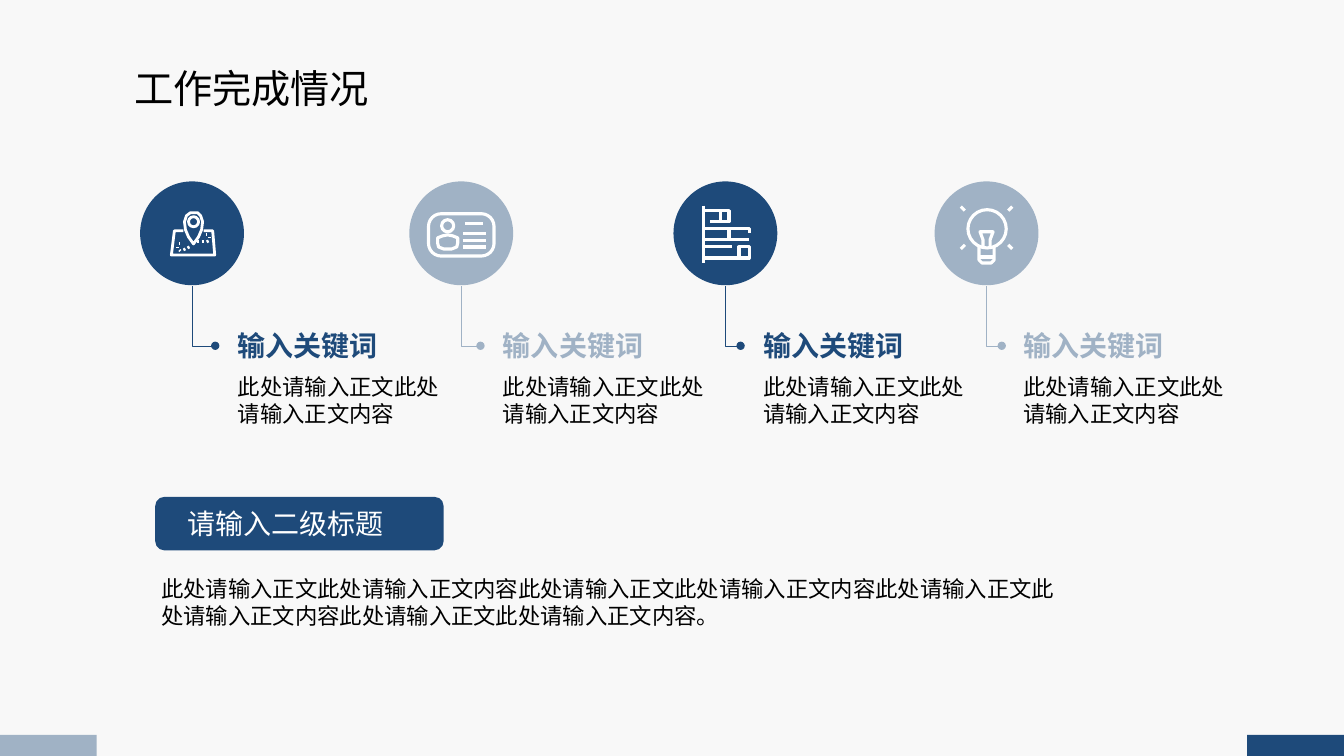
"""Build the work completion slide with four keyword columns and a summary."""
from lxml import etree
from pptx import Presentation
from pptx import util as u
from pptx.dml.color import RGBColor
from pptx.enum import shapes, text
from pptx.oxml.ns import qn


class Theme:
    navy = RGBColor(0x1E, 0x4A, 0x7A)
    mist = RGBColor(0xA0, 0xB2, 0xC5)
    white = RGBColor(0xFF, 0xFF, 0xFF)
    black = RGBColor(0, 0, 0)
    page = RGBColor(0xF8, 0xF8, 0xF8)
    font = "Noto Sans CJK SC"
    title, head, body = u.Pt(28), u.Pt(20), u.Pt(16)
    hair = u.Pt(0.25)


def write(box, words, size, color, bold=False, align=text.PP_ALIGN.LEFT):
    frame = box.text_frame
    frame.word_wrap = True
    frame.auto_size = text.MSO_AUTO_SIZE.NONE
    frame.vertical_anchor = text.MSO_ANCHOR.TOP
    para = frame.paragraphs[0]
    para.alignment = align
    run = para.add_run()
    run.text = words
    run.font.size, run.font.bold, run.font.name = size, bold, Theme.font
    run.font.color.rgb = color
    etree.SubElement(run.font._element, qn("a:ea"), typeface=Theme.font)


def paint(shape, fill=None, line=None, width=0):
    shape.shadow.inherit = False
    if fill is None:
        shape.fill.background()
    else:
        shape.fill.solid()
        shape.fill.fore_color.rgb = fill
    if line is None:
        shape.line.fill.background()
    else:
        shape.line.color.rgb = line
        shape.line.width = u.Pt(width)


deck = Presentation()
deck.slide_width, deck.slide_height = u.Inches(13.33), u.Inches(7.5)
slide = deck.slides.add_slide(deck.slide_layouts[5])
slide.background.fill.solid()
slide.background.fill.fore_color.rgb = Theme.page
draw = slide.shapes
kind = shapes.MSO_SHAPE

title = draw.title
title.left, title.top = u.Inches(1.23), u.Inches(0.59)
title.width, title.height = u.Inches(3.26), u.Inches(0.57)
write(title, "工作完成情况", Theme.title, Theme.black, align=text.PP_ALIGN.JUSTIFY)

disk, drop = 1.03, 0.59
columns = [
    (1.39, 0.23, 2.26, Theme.navy),
    (4.06, 0.19, 4.89, Theme.mist),
    (6.68, 0.15, 7.47, Theme.navy),
    (9.27, 0.15, 10.05, Theme.mist),
]
for left, run, edge, color in columns:
    dot = draw.add_shape(kind.OVAL, u.Inches(left), u.Inches(1.8), u.Inches(disk), u.Inches(disk))
    paint(dot, color)

    mid, base = left + disk / 2 + run / 2, 2.84 + drop / 2
    link = draw.add_connector(
        shapes.MSO_CONNECTOR.ELBOW,
        u.Inches(mid + drop / 2), u.Inches(base - run / 2),
        u.Inches(mid - drop / 2), u.Inches(base + run / 2))
    link.line.color.rgb = color
    link.line.width = Theme.hair
    props = link._element.spPr
    props.find(qn("a:xfrm")).set("rot", "16200000")
    props.find(qn("a:prstGeom")).set("prst", "bentConnector2")
    etree.SubElement(props.find(qn("a:ln")), qn("a:tailEnd"), type="oval")
    etree.SubElement(props, qn("a:effectLst"))

    label = draw.add_textbox(u.Inches(edge), u.Inches(3.21), u.Inches(2.06), u.Inches(0.44))
    write(label, "输入关键词", Theme.head, color, bold=True)
    note = draw.add_textbox(u.Inches(edge), u.Inches(3.65), u.Inches(2.32), u.Inches(0.64))
    write(note, "此处请输入正文此处请输入正文内容", Theme.body, Theme.black)

rings = [
    (kind.OVAL, 1.87, 2.15, 0.1, 0.1, 2),
    (kind.ROUNDED_RECTANGLE, 4.25, 2.12, 0.65, 0.42, 2.25),
    (kind.OVAL, 4.38, 2.18, 0.12, 0.12, 2.25),
    (kind.OVAL, 9.6, 2.08, 0.38, 0.38, 2.25),
]
for form, left, top, wide, high, width in rings:
    ring = draw.add_shape(form, u.Inches(left), u.Inches(top), u.Inches(wide), u.Inches(high))
    paint(ring, None, Theme.white, width)
    if form == kind.ROUNDED_RECTANGLE:
        ring.adjustments[0] = 0.3

pin = [(1.92, 2.42), (1.87, 2.35), (1.84, 2.28), (1.83, 2.2), (1.85, 2.14), (1.89, 2.11), (1.92, 2.11),
       (1.96, 2.11), (1.99, 2.14), (2.01, 2.2), (2, 2.28), (1.97, 2.35), (1.92, 2.42)]
map_icon = [
    pin,
    [(1.82, 2.29), (1.73, 2.29), (1.7, 2.53), (2.13, 2.53), (2.11, 2.29), (2.02, 2.29)],
    [(1.88, 2.45), (1.86, 2.46)], [(1.84, 2.47), (1.82, 2.48)], [(1.79, 2.49), (1.78, 2.48)],
    [(1.76, 2.46), (1.76, 2.45)], [(1.78, 2.42), (1.79, 2.42)], [(1.95, 2.4), (1.97, 2.4)],
    [(2, 2.4), (2.02, 2.4)], [(2.05, 2.4), (2.07, 2.39)], [(2.08, 2.36), (2.08, 2.35)],
    [(2.04, 2.33), (2.05, 2.33)],
]
card_icon = [
    [(4.34, 2.36), (4.39, 2.34), (4.44, 2.33), (4.49, 2.34), (4.54, 2.36), (4.54, 2.41), (4.53, 2.45),
     (4.48, 2.47), (4.4, 2.47), (4.35, 2.45), (4.34, 2.41), (4.34, 2.36)],
    [(4.61, 2.22), (4.79, 2.22)],
] + [[(4.59, y), (4.82, y)] for y in (2.32, 2.39, 2.45)]
chart_icon = [
    [(6.98, 2.04), (6.98, 2.61)],
    [(6.98, 2.09), (7.23, 2.09), (7.23, 2.2), (7.04, 2.2)], [(7.15, 2.09), (7.15, 2.2)],
    [(6.98, 2.27), (7.43, 2.27), (7.43, 2.31)], [(7.23, 2.27), (7.23, 2.38)],
    [(6.98, 2.38), (7.43, 2.38)], [(6.98, 2.45), (7.26, 2.45)],
    [(6.98, 2.56), (7.43, 2.56), (7.43, 2.45), (7.33, 2.45), (7.33, 2.56)],
]
bulb_icon = [
    [(9.75, 2.45), (9.75, 2.38), (9.72, 2.3), (9.85, 2.3), (9.82, 2.38), (9.82, 2.45)],
    [(9.71, 2.44), (9.71, 2.58), (9.74, 2.61), (9.83, 2.61), (9.86, 2.58), (9.86, 2.44)],
    [(9.71, 2.55), (9.86, 2.55)],
    [(9.53, 2.05), (9.57, 2.09)], [(10.04, 2.05), (10, 2.09)],
    [(9.53, 2.47), (9.57, 2.43)], [(10.04, 2.47), (10, 2.43)],
]
for strokes, width in ((map_icon, 2), (card_icon, 2.25), (chart_icon, 2.25), (bulb_icon, 2.25)):
    pen = draw.build_freeform(*map(u.Inches, strokes[0][0]))
    for stroke in strokes:
        spots = [(u.Inches(x), u.Inches(y)) for x, y in stroke]
        if stroke is not strokes[0]:
            pen.move_to(*spots[0])
        pen.add_line_segments(spots[1:], close=False)
    paint(pen.convert_to_shape(), None, Theme.white, width)

panels = [
    (kind.ROUNDED_RECTANGLE, 1.54, 4.93, 2.86, 0.53, Theme.navy),
    (kind.RECTANGLE, 0, 7.29, 0.96, 0.21, Theme.mist),
    (kind.RECTANGLE, 12.37, 7.29, 0.96, 0.21, Theme.navy),
]
for form, left, top, wide, high, color in panels:
    panel = draw.add_shape(form, u.Inches(left), u.Inches(top), u.Inches(wide), u.Inches(high))
    paint(panel, color)

banner = draw.add_textbox(u.Inches(1.76), u.Inches(4.98), u.Inches(2.42), u.Inches(0.44))
write(banner, "请输入二级标题", Theme.head, Theme.white, align=text.PP_ALIGN.JUSTIFY)
recap = draw.add_textbox(u.Inches(1.5), u.Inches(5.66), u.Inches(9.09), u.Inches(0.64))
write(recap, "此处请输入正文此处请输入正文内容此处请输入正文此处请输入正文内容此处请输入正文此处请输入正文内容此处请输入正文此处请输入正文内容。",
      Theme.body, Theme.black)

deck.save("out.pptx")
